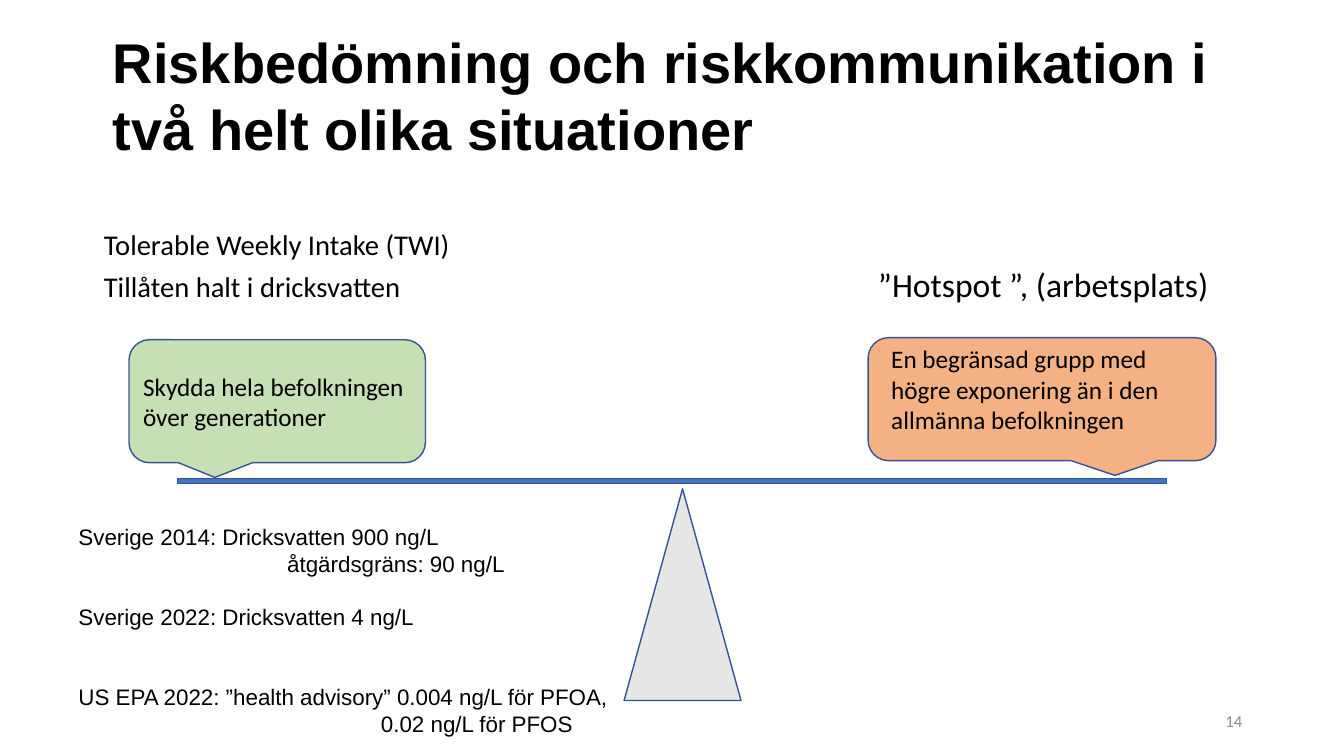
from pptx import Presentation
from pptx.dml.color import RGBColor
from pptx.enum.shapes import MSO_SHAPE
from pptx.enum.text import MSO_ANCHOR, MSO_AUTO_SIZE, PP_ALIGN
from pptx.util import Inches, Pt

TOP, MIDDLE = MSO_ANCHOR.TOP, MSO_ANCHOR.MIDDLE
LEFT, RIGHT = PP_ALIGN.LEFT, PP_ALIGN.RIGHT
CALLOUT = MSO_SHAPE.ROUNDED_RECTANGULAR_CALLOUT
TRIANGLE, RECTANGLE = MSO_SHAPE.ISOSCELES_TRIANGLE, MSO_SHAPE.RECTANGLE

TITLE = "Riskbedömning och riskkommunikation i två helt olika situationer"
POPULATION_TERMS = ["Tolerable Weekly Intake (TWI)", "Tillåten halt i dricksvatten"]
HOTSPOT = "”Hotspot ”, (arbetsplats)"
PAGE_NUMBER = "14"
# text, left indent in inches, space before in points
LIMITS = [
    ("Sverige 2014: Dricksvatten 900 ng/L", 0, 0),
    ("åtgärdsgräns: 90 ng/L", 2.07, 0),
    ("Sverige 2022: Dricksvatten 4 ng/L", 0, 19),
    ("US EPA 2022: ”health advisory” 0.004 ng/L för PFOA,", 0, 38),
    ("0.02 ng/L för PFOS", 3, 0),
]
# text, box, fill, pointer offset, anchor, margins (left, top, right, bottom)
CALLOUTS = [
    ("Skydda hela befolkningen över generationer", (1.28, 3.37, 2.94, 1.22),
     "green", (-0.21, 0.62), MIDDLE, (0.08, 0, 0, 0)),
    ("En begränsad grupp med högre exponering än i den allmänna befolkningen",
     (8.61, 3.35, 3.45, 1.22), "orange", (0.21, 0.62), TOP, (0.17, 0, 0.16, 0)),
]
SCALE_PARTS = [
    (TRIANGLE, (6.19, 4.85, 1.16, 2.1), "gray"),
    (RECTANGLE, (1.76, 4.75, 9.81, 0.05), "blue"),
]
THEME = {
    "colors": {"text": "000000", "muted": "8C8C8C", "outline": "325491", "gray": "E7E6E6",
               "blue": "4472C4", "green": "C5E0B4", "orange": "F4B183"},
    "fonts": {
        "title": {"name": "Arial", "size": Pt(40), "bold": True},
        "terms": {"name": "Calibri", "size": Pt(20.4)},
        "hotspot": {"name": "Calibri", "size": Pt(24)},
        "callout": {"name": "Calibri", "size": Pt(18)},
        "limits": {"name": "Arial", "size": Pt(16)},
        "number": {"name": "Calibri", "size": Pt(12)},
    },
}


def color(name):
    return RGBColor.from_string(THEME["colors"][name])


def place(part, box):
    part.left, part.top, part.width, part.height = map(Inches, box)


def write(part, lines, style, ink="text", anchor=TOP, margins=(0.1, 0.05, 0.1, 0.05),
          align=LEFT, spacing=1.0, gap=0):
    """Fill a shape; each line is a text or a (text, indent, space before) tuple."""
    frame = part.text_frame
    left, top, right, bottom = map(Inches, margins)
    frame_format = {"word_wrap": True, "auto_size": MSO_AUTO_SIZE.NONE,
                    "vertical_anchor": anchor, "margin_left": left, "margin_top": top,
                    "margin_right": right, "margin_bottom": bottom}
    for key, value in frame_format.items():
        setattr(frame, key, value)
    for index, line in enumerate(lines):
        text, indent, before = line if isinstance(line, tuple) else (line, 0, gap if index else 0)
        paragraph = frame.paragraphs[0] if index == 0 else frame.add_paragraph()
        properties = paragraph._p.get_or_add_pPr()
        properties.set("marL", str(Inches(indent)))
        properties.set("indent", "0")
        paragraph.alignment = align
        paragraph.line_spacing = spacing
        paragraph.space_before = Pt(before)
        properties.append(properties.makeelement(
            "{http://schemas.openxmlformats.org/drawingml/2006/main}buNone", {}))
        run = paragraph.add_run()
        run.text = text
        for key, value in THEME["fonts"][style].items():
            setattr(run.font, key, value)
        run.font.color.rgb = color(ink)


def add_filled(slide, kind, box, fill):
    part = slide.shapes.add_shape(kind, *map(Inches, box))
    part.shadow.inherit = False
    part.fill.solid()
    part.fill.fore_color.rgb = color(fill)
    part.line.color.rgb = color("outline")
    part.line.width = Pt(1)
    return part


def add_label(slide, box, lines, style, **options):
    write(slide.shapes.add_textbox(*map(Inches, box)), lines, style, **options)


def main():
    deck = Presentation()
    deck.slide_width, deck.slide_height = Inches(13.33), Inches(7.5)
    slide = deck.slides.add_slide(deck.slide_layouts[1])

    title, terms = slide.shapes.title, slide.placeholders[1]
    place(title, (1.02, 0.21, 11.4, 1.45))
    write(title, [TITLE], "title", anchor=MIDDLE)
    place(terms, (0.93, 2.27, 3.64, 1.01))
    write(terms, POPULATION_TERMS, "terms", spacing=0.8, gap=10)

    for kind, box, fill in SCALE_PARTS:
        add_filled(slide, kind, box, fill)
    for text, box, fill, pointer, anchor, margins in CALLOUTS:
        callout = add_filled(slide, CALLOUT, box, fill)
        for index, offset in enumerate(pointer):
            callout.adjustments[index] = offset
        write(callout, [text], "callout", anchor=anchor, margins=margins)

    add_label(slide, (8.61, 2.61, 4.5, 0.6), [HOTSPOT], "hotspot", spacing=0.9)
    add_label(slide, (0.68, 5.14, 5.78, 2.26), LIMITS, "limits")
    add_label(slide, (9.42, 6.95, 3, 0.4), [PAGE_NUMBER], "number",
              ink="muted", anchor=MIDDLE, align=RIGHT)
    deck.save("out.pptx")


if __name__ == "__main__":
    main()
